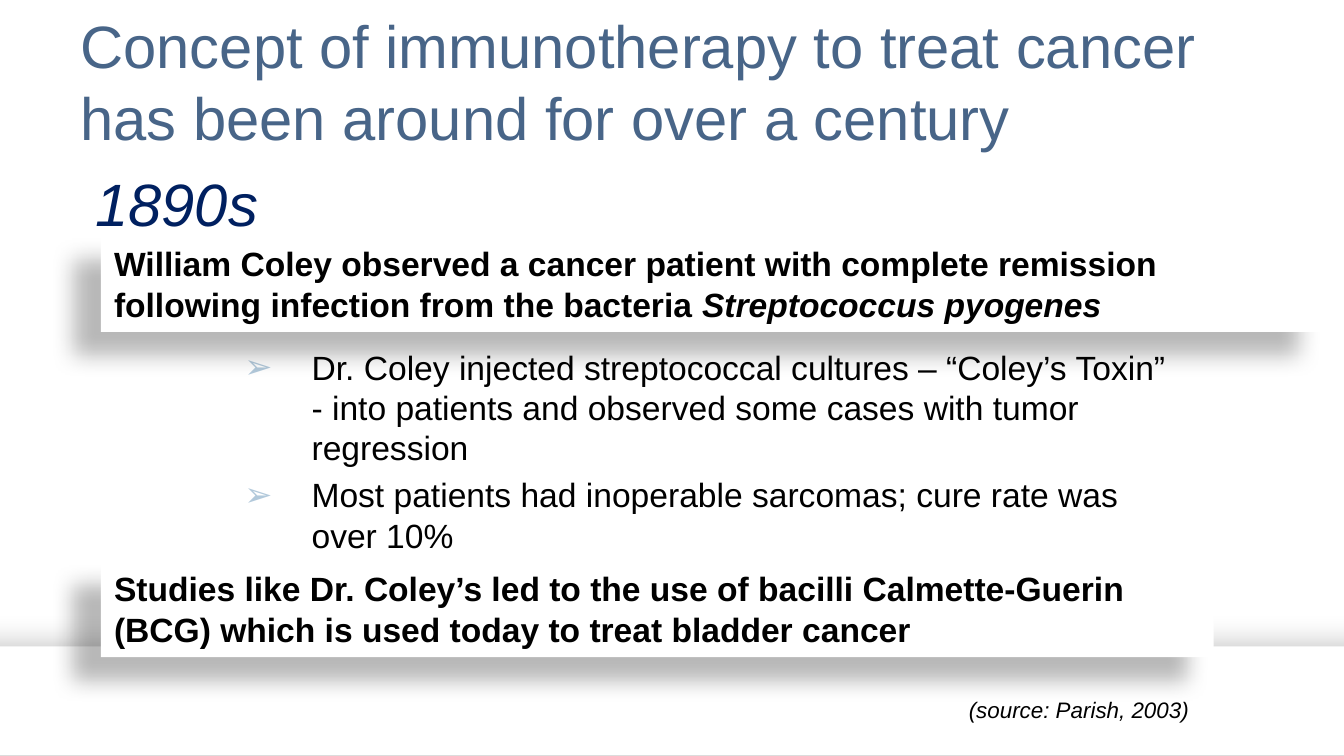
from lxml import etree
from pptx import Presentation
from pptx.dml.color import RGBColor
from pptx.enum.shapes import MSO_SHAPE as Shape
from pptx.enum.text import MSO_ANCHOR as Anchor, PP_ALIGN as Align
from pptx.oxml.ns import qn
from pptx.util import Inches, Pt

FONT = "Arial"
BLACK, WHITE, BULLET_BLUE = "000000", "FFFFFF", "B2C9DB"
SLIDE_WIDTH = Inches(10)
SLIDE_HEIGHT = SLIDE_WIDTH * 9 // 16

TITLE = "Concept of immunotherapy to treat cancer has been around for over a century"
LABELS = [
    ((0.5, 0.02, 9, 0.94), TITLE, 32, "486588", False, True),
    ((0.61, 1.19, 1.42, 0.64), "1890s", 32, "002060", True, False),
    ((7.11, 5.13, 1.85, 0.3), "(source: Parish, 2003)", 12, BLACK, True, False),
]
FINDINGS_BOX = (1.27, 2.53, 7.52, 2.01)
FINDINGS = [
    "Dr. Coley injected streptococcal cultures – “Coley’s Toxin” - into patients "
    "and observed some cases with tumor regression",
    "Most patients had inoperable sarcomas; cure rate was over 10%",
]
FOOTER_BAND = (-0.26, 4.81, 10.73, 0.81)
FOOTER_SHADOW = dict(opacity=27, blur=17.5, distance=0, angle=270)
PANEL_SHADOW = dict(opacity=28, blur=11.8, distance=19.7, angle=141)
PANELS = [
    ((0.75, 1.76, 9.12, 0.71), [
        ("William Coley observed a cancer patient with complete remission "
         "following infection from the bacteria ", False),
        ("Streptococcus pyogenes", True),
    ]),
    ((0.75, 4.18, 8.28, 0.71), [
        ("Studies like Dr. Coley’s led to the use of bacilli Calmette-Guerin "
         "(BCG) which is used today to treat bladder cancer", False),
    ]),
]


def color(value):
    return RGBColor.from_string(value)


def place(box):
    return [Inches(length) for length in box]


def add_run(paragraph, text, size, ink, bold=False, italic=False):
    run = paragraph.add_run()
    run.text = text
    font = run.font
    font.name, font.size = FONT, Pt(size)
    font.bold, font.italic = bold, italic
    font.color.rgb = color(ink)


def add_text_frame(slide, box, wrap=True):
    frame = slide.shapes.add_textbox(*place(box)).text_frame
    frame.word_wrap = wrap
    return frame


def add_shadowed_panel(slide, box, opacity, blur, distance, angle):
    panel = slide.shapes.add_shape(Shape.RECTANGLE, *place(box))
    panel.fill.solid()
    panel.fill.fore_color.rgb = color(WHITE)
    panel.line.fill.background()
    panel.shadow.inherit = False
    effects = panel.element.spPr.find(qn("a:effectLst"))
    shadow = etree.SubElement(
        effects, qn("a:outerShdw"), blurRad=str(Pt(blur)), dist=str(Pt(distance)),
        dir=str(angle * 60000), algn="ctr", rotWithShape="0")
    tint = etree.SubElement(shadow, qn("a:srgbClr"), val=BLACK)
    etree.SubElement(tint, qn("a:alpha"), val=str(opacity * 1000))
    return panel


def add_bullet(paragraph):
    props = paragraph._p.get_or_add_pPr()
    props.set("marL", str(Inches(0.95)))
    props.set("indent", str(Inches(-0.5)))
    bullet_color = etree.SubElement(props, qn("a:buClr"))
    etree.SubElement(bullet_color, qn("a:srgbClr"), val=BULLET_BLUE)
    etree.SubElement(props, qn("a:buFont"), typeface=FONT)
    etree.SubElement(props, qn("a:buChar"), char="➢")


def build():
    deck = Presentation()
    deck.slide_width, deck.slide_height = SLIDE_WIDTH, SLIDE_HEIGHT
    slide = deck.slides.add_slide(deck.slide_layouts[6])

    add_shadowed_panel(slide, FOOTER_BAND, **FOOTER_SHADOW)

    findings = add_text_frame(slide, FINDINGS_BOX)
    for index, finding in enumerate(FINDINGS):
        paragraph = findings.add_paragraph() if index else findings.paragraphs[0]
        add_bullet(paragraph)
        if index:
            paragraph.space_before = Pt(3.6)
        add_run(paragraph, finding, 18, BLACK)

    for box, text, size, ink, italic, wrap in LABELS:
        frame = add_text_frame(slide, box, wrap)
        add_run(frame.paragraphs[0], text, size, ink, italic=italic)

    for box, runs in PANELS:
        frame = add_shadowed_panel(slide, box, **PANEL_SHADOW).text_frame
        frame.word_wrap = True
        frame.vertical_anchor = Anchor.TOP
        paragraph = frame.paragraphs[0]
        paragraph.alignment = Align.LEFT
        for text, italic in runs:
            add_run(paragraph, text, 18, BLACK, bold=True, italic=italic)

    deck.save("out.pptx")


if __name__ == "__main__":
    build()
